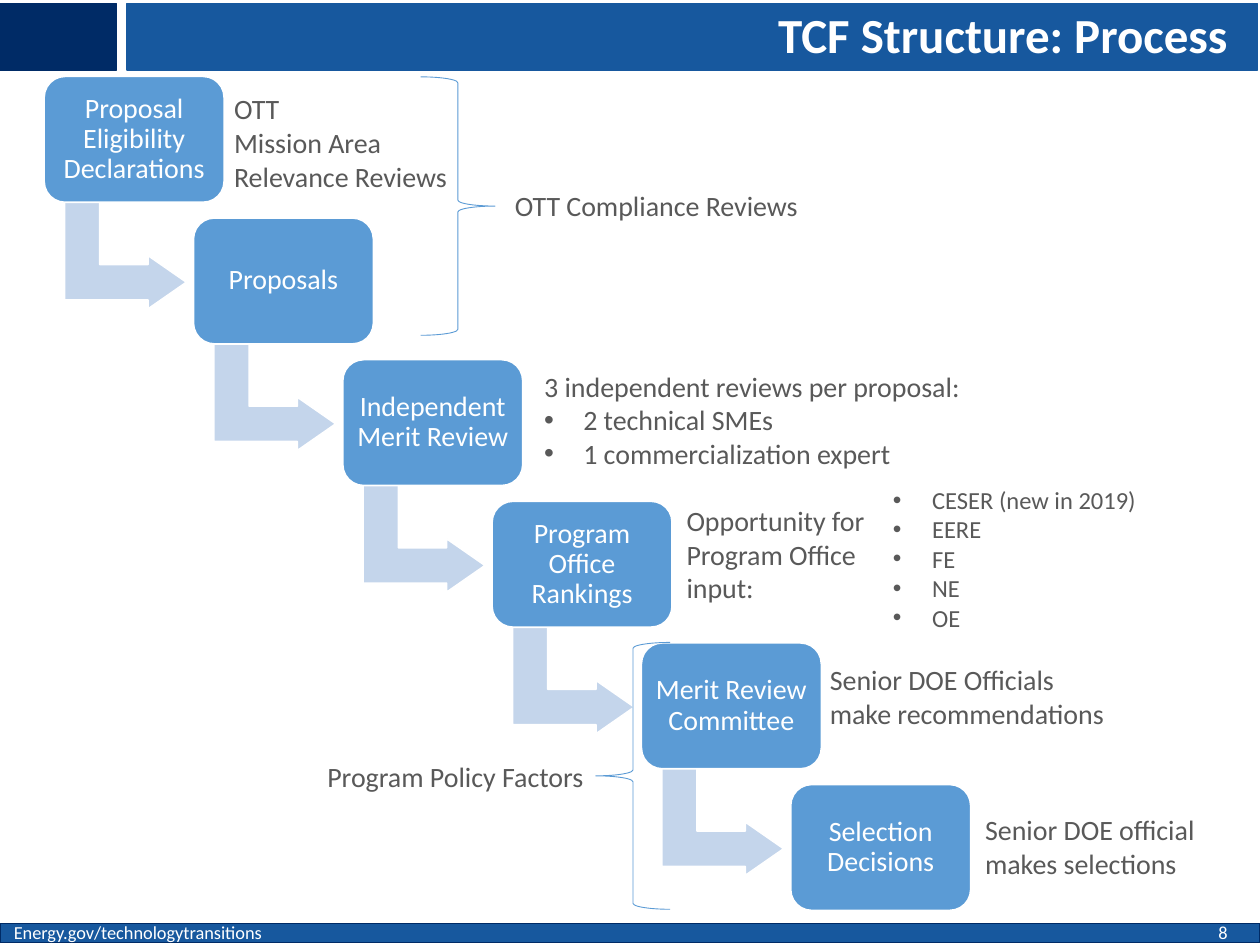
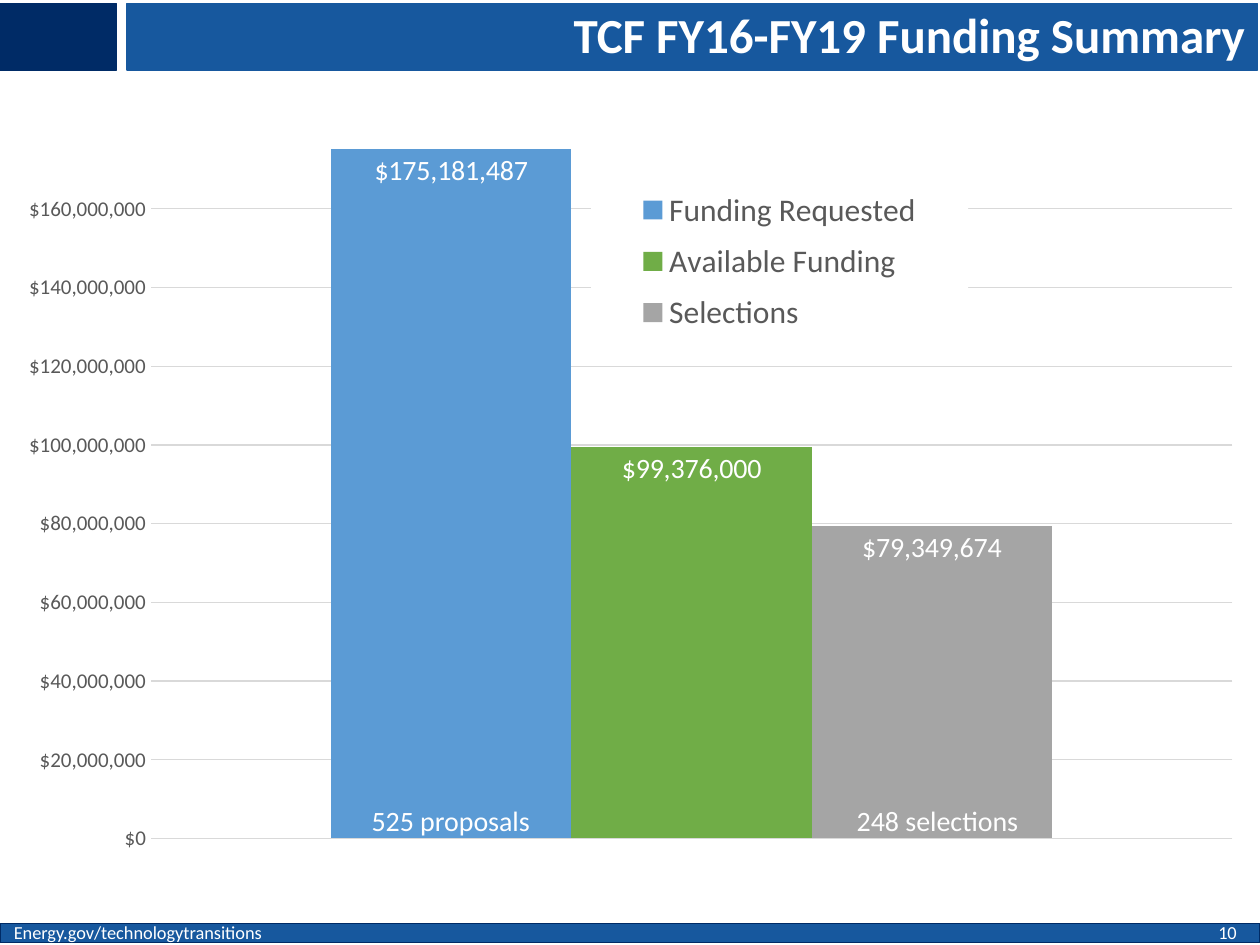
"""Build two slides on the fund: its review process and its funding summary."""
from dataclasses import dataclass

from lxml import etree
from pptx import Presentation
from pptx.chart.data import CategoryChartData
from pptx.dml.color import RGBColor
from pptx.enum.chart import XL_CHART_TYPE, XL_LABEL_POSITION, XL_LEGEND_POSITION, XL_TICK_MARK
from pptx.enum.shapes import MSO_SHAPE
from pptx.enum.text import MSO_ANCHOR, MSO_AUTO_SIZE, PP_ALIGN
from pptx.oxml import parse_xml
from pptx.oxml.ns import nsdecls, qn
from pptx.util import Cm, Pt

RECT, ROUND = MSO_SHAPE.RECTANGLE, MSO_SHAPE.ROUNDED_RECTANGLE
BENT, BRACE = MSO_SHAPE.BENT_UP_ARROW, MSO_SHAPE.RIGHT_BRACE
CENTER, RIGHT = PP_ALIGN.CENTER, PP_ALIGN.RIGHT
MIDDLE, FIXED = MSO_ANCHOR.MIDDLE, MSO_AUTO_SIZE.NONE
COLUMN, IN_END = XL_CHART_TYPE.COLUMN_CLUSTERED, XL_LABEL_POSITION.INSIDE_END
SIDE, NO_TICK = XL_LEGEND_POSITION.RIGHT, XL_TICK_MARK.NONE

FACE = "Calibri"
WHITE, GRAY, GRID = "FFFFFF", "595959", "D9D9D9"
NAVY, ROYAL, SKY, PALE = "002B66", "17589E", "5B9BD5", "C4D5EB"
GREEN, SILVER = "70AD47", "A5A5A5"
MONEY = '"$"#,##0'


@dataclass
class Area:
    """A place on the slide, in centimetres."""
    left: float
    top: float
    width: float
    height: float

    def cm(self) -> tuple:
        """Return the four lengths for python-pptx."""
        return Cm(self.left), Cm(self.top), Cm(self.width), Cm(self.height)

    def shift(self, x: float, y: float) -> "Area":
        """Return the same area moved by x and y."""
        return Area(self.left + x, self.top + y, self.width, self.height)


@dataclass
class Band:
    """A coloured bar of the slide frame."""
    area: Area
    fill: str
    line: str


@dataclass
class Note:
    """A text box; lines that follow the head are bullets."""
    area: Area
    head: str = ""
    items: tuple = ()
    size: float = 16
    color: str = GRAY
    wrap: bool = False


@dataclass
class Brace:
    """A brace that ties steps to a note."""
    area: Area
    turn: int


@dataclass
class Fund:
    """One column of the chart."""
    name: str
    value: int
    color: str


BANDS = (
    Band(Area(2.56, 0.07, 22.79, 1.35), ROYAL, ROYAL),
    Band(Area(0, 0.07, 2.35, 1.35), NAVY, NAVY),
    Band(Area(0, 18.62, 25.4, 0.38), ROYAL, NAVY),
)
SITE = Note(Area(0.03, 18.44, 7.04, 0.74), "Energy.gov/technologytransitions",
            size=10.5, color=WHITE, wrap=True)
PAGE = Area(24.31, 18.44, 1.04, 0.74)

STEPS = (
    "Proposal Eligibility Declarations", "Proposals", "Independent Merit Review",
    "Program Office Rankings", "Merit Review Committee", "Selection Decisions",
)
FIRST = Area(0.89, 1.54, 3.63, 2.54)
STEP_X, STEP_Y = 3.01, 2.855
BEND = Area(1.45, 3.92, 2.16, 2.46)

BRACES = (
    Brace(Area(8.48, 1.55, 1.5, 5.21), 0),
    Brace(Area(12.01, 12.95, 1.5, 5.38), 180),
)
NOTES = (
    Note(Area(4.47, 1.73, 5, 2.31), "OTT\nMission Area\nRelevance Reviews"),
    Note(Area(16.48, 13.23, 6.25, 1.63), "Senior DOE Officials\nmake recommendations"),
    Note(Area(6.35, 15.19, 5.74, 0.94), "Program Policy Factors"),
    Note(Area(19.61, 16.26, 4.8, 1.63), "Senior DOE official\nmakes selections"),
    Note(Area(10.13, 3.68, 6.43, 0.94), "OTT Compliance Reviews"),
    Note(Area(13.59, 10.03, 4.29, 2.31), "Opportunity for\nProgram Office\ninput:"),
    Note(Area(10.72, 7.32, 8.99, 2.31), "3 independent reviews per proposal:",
         ("2 technical SMEs", "1 commercialization expert")),
    Note(Area(17.75, 9.65, 5.99, 3.25), items=("CESER (new in 2019)", "EERE", "FE", "NE", "OE"),
         size=14, wrap=True),
)

FUNDS = (
    Fund("Funding Requested", 175181487, SKY),
    Fund("Available Funding", 99376000, GREEN),
    Fund("Selections", 79349674, SILVER),
)
COUNTS = (
    Note(Area(7.24, 16.08, 3.76, 0.94), "525 proposals", color=WHITE),
    Note(Area(17.02, 16.08, 3.81, 0.94), "248 selections", color=WHITE),
)
CHART = Area(0, 2.62, 25.35, 16.05)


def paint(target, color: str) -> None:
    """Give a fill a solid colour."""
    target.solid()
    target.fore_color.rgb = RGBColor.from_string(color)


def style(font, size: float, color: str, bold: bool = False) -> None:
    """Set face, size, weight and colour of a font."""
    font.name, font.size, font.bold = FACE, Pt(size), bold
    font.color.rgb = RGBColor.from_string(color)


def draw(slide, kind, area: Area, fill: str, line: str, width: float = 1):
    """Add a preset shape; an empty fill leaves it hollow."""
    shape = slide.shapes.add_shape(kind, *area.cm())
    shape.shadow.inherit = False
    if fill:
        paint(shape.fill, fill)
    else:
        shape.fill.background()
    paint(shape.line.fill, line)
    shape.line.width = Pt(width)
    return shape


def bullet(para) -> None:
    """Turn a paragraph into a hanging bullet."""
    props = para._p.get_or_add_pPr()
    props.set("marL", str(Cm(0.79)))
    props.set("indent", str(-Cm(0.79)))
    etree.SubElement(props, qn("a:buFont")).set("typeface", "Arial")
    etree.SubElement(props, qn("a:buChar")).set("char", "•")


def write(slide, note: Note) -> None:
    """Add a note as a text box."""
    frame = slide.shapes.add_textbox(*note.area.cm()).text_frame
    frame.word_wrap = note.wrap
    lines = ([note.head] if note.head else []) + list(note.items)
    for i, line in enumerate(lines):
        para = frame.add_paragraph() if i else frame.paragraphs[0]
        para.text = line
        if line in note.items:
            bullet(para)
        style(para.font, note.size, note.color)


def start(deck, title: str, area: Area, page: str):
    """Add a slide with bands, footer and title."""
    slide = deck.slides.add_slide(deck.slide_layouts[5])
    for band in BANDS:
        draw(slide, RECT, band.area, band.fill, band.line)
    write(slide, SITE)
    write(slide, Note(PAGE, page, size=10.5, color=WHITE, wrap=True))
    head = slide.shapes.title
    head.element.getparent().append(head.element)
    head.left, head.top, head.width, head.height = area.cm()
    frame = head.text_frame
    frame.auto_size, frame.vertical_anchor = FIXED, MIDDLE
    para = frame.paragraphs[0]
    para.text, para.alignment, para.line_spacing = title, RIGHT, 0.9
    style(para.font, 28, WHITE, True)
    return slide


def stair(slide) -> None:
    """Draw the steps and the bent arrows between them."""
    for i, step in enumerate(STEPS):
        x, y = i * STEP_X, i * STEP_Y
        if i < len(STEPS) - 1:
            bend = draw(slide, BENT, BEND.shift(x, y), PALE, WHITE)
            bend.rotation = 90
            for k, value in enumerate((0.33, 0.25, 0.36)):
                bend.adjustments[k] = value
        frame = draw(slide, ROUND, FIRST.shift(x, y), SKY, WHITE).text_frame
        frame.word_wrap, frame.vertical_anchor = True, MIDDLE
        frame.margin_left = frame.margin_right = Cm(0.12)
        frame.margin_top = frame.margin_bottom = Cm(0.12)
        para = frame.paragraphs[0]
        para.text, para.alignment, para.line_spacing = step, CENTER, 0.9
        style(para.font, 16, WHITE)


def place(x: float, y: float, w: float, h: float, inner: bool = False):
    """Return a manual chart layout in shares of the chart."""
    target = '<c:layoutTarget val="inner"/>' if inner else ""
    return parse_xml(
        f'<c:layout {nsdecls("c")}><c:manualLayout>{target}'
        '<c:xMode val="edge"/><c:yMode val="edge"/>'
        f'<c:x val="{x}"/><c:y val="{y}"/><c:w val="{w}"/><c:h val="{h}"/>'
        '</c:manualLayout></c:layout>')


def columns(slide) -> None:
    """Draw the funding chart."""
    data = CategoryChartData(number_format=MONEY)
    data.categories = ["1"]
    for fund in FUNDS:
        data.add_series(fund.name, [fund.value])
    chart = slide.shapes.add_chart(COLUMN, *CHART.cm(), data).chart
    style(chart.font, 12, GRAY)
    chart.has_title = False
    plot = chart.plots[0]
    plot.gap_width, plot.overlap, plot.vary_by_categories = 150, 0, False
    for fund, series in zip(FUNDS, plot.series):
        paint(series.format.fill, fund.color)
        labels = series.data_labels
        labels.show_value, labels.position = True, IN_END
        labels.number_format, labels.number_format_is_linked = MONEY, False
        style(labels.font, 16, WHITE)
    chart.category_axis.visible = False
    axis = chart.value_axis
    axis.minimum_scale, axis.maximum_scale, axis.major_unit = 0, 176000000, 20000000
    axis.major_tick_mark = axis.minor_tick_mark = NO_TICK
    axis.tick_labels.number_format = MONEY
    axis.tick_labels.number_format_is_linked = False
    style(axis.tick_labels.font, 12, GRAY)
    axis.format.line.fill.background()
    rule = axis.major_gridlines.format.line
    paint(rule.fill, GRID)
    rule.width = Pt(0.75)
    area = chart.element.find(".//" + qn("c:plotArea"))
    for old in area.findall(qn("c:layout")):
        area.remove(old)
    area.insert(0, place(0.12, 0.02, 0.86, 0.87, True))
    key_box(chart)


def key_box(chart) -> None:
    """Place the legend on a white ground over the grid."""
    chart.has_legend = True
    key = chart.legend
    key.position, key.include_in_layout = SIDE, False
    style(key.font, 18, GRAY)
    root = chart.element.find(".//" + qn("c:legend"))
    for old in root.findall(qn("c:layout")):
        root.remove(old)
    root.find(qn("c:legendPos")).addnext(place(0.47, 0.06, 0.3, 0.21))
    root.find(qn("c:overlay")).addnext(parse_xml(
        f'<c:spPr {nsdecls("c", "a")}><a:solidFill><a:srgbClr val="{WHITE}"/>'
        '</a:solidFill><a:ln><a:noFill/></a:ln></c:spPr>'))


def main() -> None:
    """Build and save the deck."""
    deck = Presentation()
    deck.slide_width, deck.slide_height = Cm(25.4), Cm(19.05)

    flow = start(deck, "TCF Structure: Process", Area(3.18, 0.08, 21.82, 1.35), "8")
    stair(flow)
    for brace in BRACES:
        shape = draw(flow, BRACE, brace.area, "", SKY, 0.5)
        shape.rotation = brace.turn
        shape.adjustments[0] = 0.08
    for note in NOTES:
        write(flow, note)

    money = start(deck, "TCF FY16-FY19 Funding Summary", Area(3.1, 0.08, 22.25, 1.35), "10")
    columns(money)
    for note in COUNTS:
        write(money, note)
    deck.save("out.pptx")


if __name__ == "__main__":
    main()
